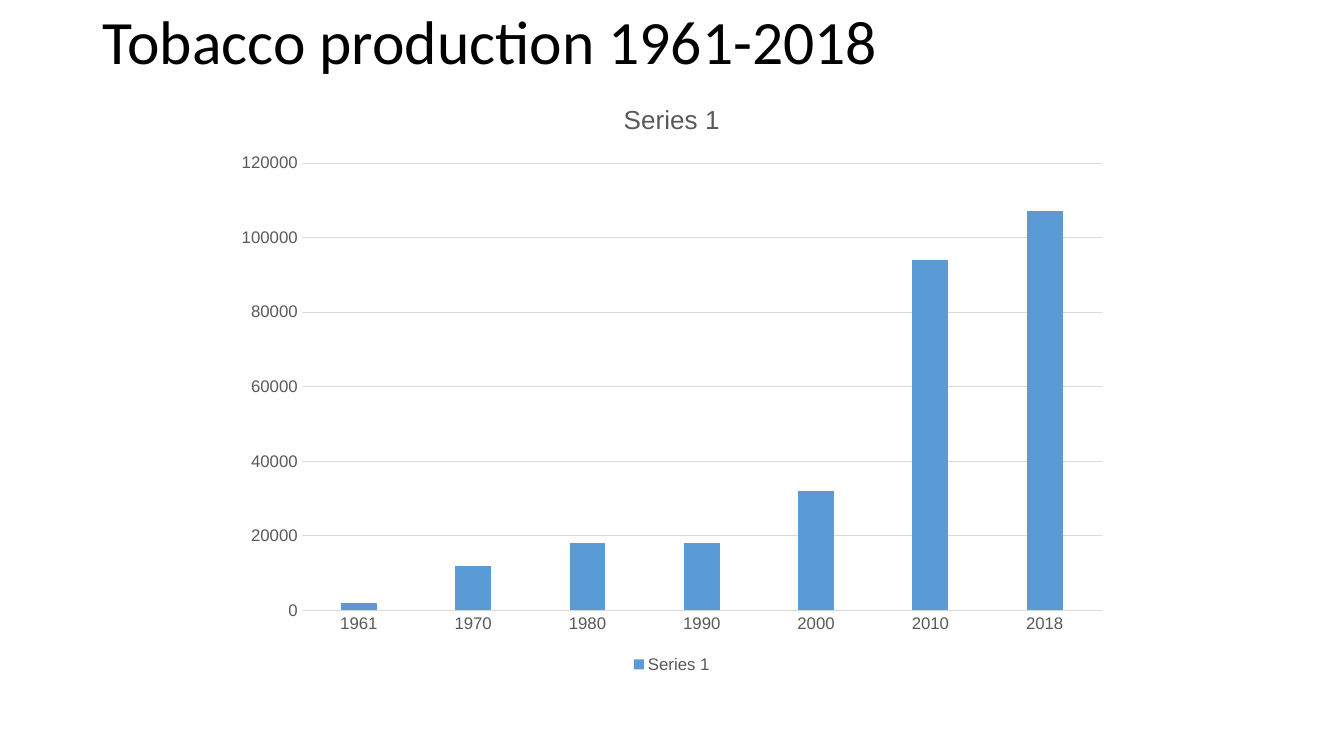
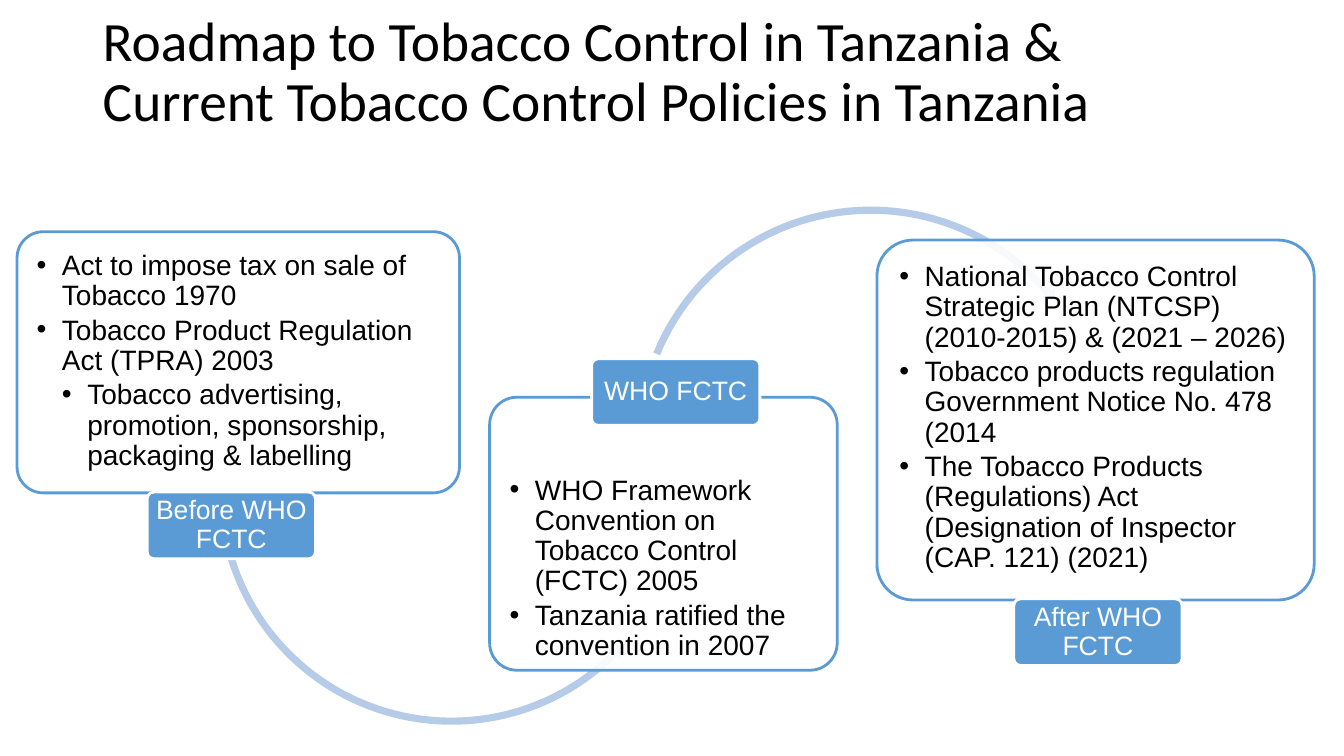
from dataclasses import dataclass

from lxml import etree
from pptx import Presentation
from pptx import util as u
from pptx.chart.data import CategoryChartData
from pptx.dml.color import RGBColor
from pptx.enum import chart as charts, shapes, text
from pptx.oxml.ns import qn


@dataclass(frozen=True)
class Theme:
    black: str = "000000"
    white: str = "FFFFFF"
    blue: str = "5B9BD5"
    pale_blue: str = "B5CBE7"
    grey: str = "595959"
    grid: str = "D9D9D9"
    title_font: str = "Calibri"
    body_font: str = "Arial"
    card_size: float = 20
    label_size: float = 19
    chart_title_size: float = 18.6
    chart_size: float = 12
    border: float = 2
    hairline: float = 0.75
    line_spacing: float = 0.9
    indent: float = 0.64


def rgb(colour):
    return RGBColor.from_string(colour)


class Deck:
    """Holds the style, the presentation and the current slide."""

    def __init__(self, theme):
        self.theme = theme
        self.deck = Presentation()
        self.deck.slide_width, self.deck.slide_height = u.Cm(33.87), u.Cm(19.05)
        self.slide = None

    def style(self, font, size, colour, name=None):
        font.name = name or self.theme.body_font
        font.size, font.color.rgb = u.Pt(size), rgb(colour)

    def set_insets(self, frame, side, top):
        frame.margin_left = frame.margin_right = u.Cm(side)
        frame.margin_top = frame.margin_bottom = u.Cm(top)

    def add_slide(self, heading, box, size):
        self.slide = self.deck.slides.add_slide(self.deck.slide_layouts[6])
        frame = self.slide.shapes.add_textbox(*map(u.Cm, box)).text_frame
        frame.word_wrap = True
        frame.vertical_anchor = text.MSO_ANCHOR.MIDDLE
        title = frame.paragraphs[0]
        title.text, title.line_spacing = heading, self.theme.line_spacing
        self.style(title.font, size, self.theme.black, self.theme.title_font)

    def shape(self, kind, box, fill, line=None):
        shape = self.slide.shapes.add_shape(kind, *map(u.Cm, box))
        shape.shadow.inherit = False
        shape.fill.solid()
        shape.fill.fore_color.rgb = rgb(fill)
        if line:
            shape.line.color.rgb = rgb(line)
            shape.line.width = u.Pt(self.theme.border)
        else:
            shape.line.fill.background()
        return shape

    def rounded(self, box, fill, line):
        shape = self.shape(shapes.MSO_SHAPE.ROUNDED_RECTANGLE, box, fill, line)
        shape.adjustments[0] = 0.1
        shape.text_frame.word_wrap = True
        return shape

    def bullet(self, paragraph, level):
        props = paragraph._p.get_or_add_pPr()
        props.set("marL", str(u.Cm(self.theme.indent * (level + 1))))
        props.set("indent", str(-u.Cm(self.theme.indent)))
        etree.SubElement(props, qn("a:buFont"), typeface=self.theme.body_font)
        etree.SubElement(props, qn("a:buChar"), char="•")

    def card(self, box, items, top):
        """Translucent card; each item is a (level, wording) pair."""
        card = self.rounded(box, self.theme.white, self.theme.blue)
        colour = card.fill._xPr.find(".//" + qn("a:srgbClr"))
        etree.SubElement(colour, qn("a:alpha"), val="90000")
        frame = card.text_frame
        self.set_insets(frame, 0.3, top)
        frame.vertical_anchor = text.MSO_ANCHOR.TOP
        for number, (level, wording) in enumerate(items):
            item = frame.add_paragraph() if number else frame.paragraphs[0]
            item.text, item.alignment = wording, text.PP_ALIGN.LEFT
            item.line_spacing, item.space_after = self.theme.line_spacing, u.Pt(3)
            self.style(item.font, self.theme.card_size, self.theme.black)
            self.bullet(item, level)

    def label(self, left, top, wording):
        label = self.rounded((left, top, 4.24, 1.68), self.theme.blue, self.theme.white)
        frame = label.text_frame
        self.set_insets(frame, 0.1, 0.07)
        frame.vertical_anchor = text.MSO_ANCHOR.MIDDLE
        name = frame.paragraphs[0]
        name.text, name.alignment = wording, text.PP_ALIGN.CENTER
        name.line_spacing = self.theme.line_spacing
        self.style(name.font, self.theme.label_size, self.theme.white)

    def arc(self, kind, left, top, size, start, end):
        """Thin circular arrow between two angles in degrees."""
        arc = self.shape(kind, (left, top, size, size), self.theme.pale_blue)
        per_degree = 0.6  # 60000 angle units over the 100000 adjustment scale
        values = (0.015, 3 * per_degree, end * per_degree, start * per_degree, 0.018)
        for number, value in enumerate(values):
            arc.adjustments[number] = value

    def column_chart(self, box, name, points):
        theme = self.theme
        data = CategoryChartData()
        data.categories = list(points)
        data.add_series(name, list(points.values()))
        chart = self.slide.shapes.add_chart(
            charts.XL_CHART_TYPE.COLUMN_CLUSTERED, *map(u.Cm, box), data).chart
        self.style(chart.font, theme.chart_size, theme.grey)

        # Title and legend
        chart.has_title = True
        heading = chart.chart_title.text_frame.paragraphs[0]
        heading.text = name
        self.style(heading.font, theme.chart_title_size, theme.grey)
        heading.font.bold = False
        chart.has_legend = True
        chart.legend.position = charts.XL_LEGEND_POSITION.BOTTOM
        chart.legend.include_in_layout = False
        self.style(chart.legend.font, theme.chart_size, theme.grey)

        # Axes
        for axis in (chart.category_axis, chart.value_axis):
            axis.major_tick_mark = axis.minor_tick_mark = charts.XL_TICK_MARK.NONE
            self.style(axis.tick_labels.font, theme.chart_size, theme.grey)
        chart.value_axis.format.line.fill.background()
        for ruled in (chart.category_axis, chart.value_axis.major_gridlines):
            ruled.format.line.color.rgb = rgb(theme.grid)
            ruled.format.line.width = u.Pt(theme.hairline)

        # Columns
        plot = chart.plots[0]
        plot.gap_width, plot.overlap, plot.vary_by_categories = 219, -27, False
        columns = plot.series[0].format.fill
        columns.solid()
        columns.fore_color.rgb = rgb(theme.blue)


def main():
    deck = Deck(Theme())

    # Production chart
    deck.add_slide("Tobacco production 1961-2018", (2.34, 0, 29.21, 2.24), 44)
    production = {"1961": 2000, "1970": 12000, "1980": 18000, "1990": 18000,
                  "2000": 32000, "2010": 94000, "2018": 107000}
    deck.column_chart((5.64, 2.01, 22.58, 15.06), "Series 1", production)

    # Roadmap: each arc lies over its own card and under the next one
    deck.add_slide("Roadmap to Tobacco Control in Tanzania & "
                   "Current Tobacco Control Policies in Tanzania",
                   (2.34, 0.23, 26.37, 3.23), 39.6)

    # Before the convention
    deck.card((0.43, 5.84, 11.15, 6.58), [
        (0, "Act to impose tax on sale of Tobacco 1970"),
        (0, "Tobacco Product Regulation Act (TPRA) 2003"),
        (1, "Tobacco advertising, promotion, sponsorship, packaging & labelling"),
    ], top=0.3)
    deck.arc(shapes.MSO_SHAPE.LEFT_CIRCULAR_ARROW, 5.36, 6.35, 12.04,
             start=162.95, end=45.13)
    deck.label(3.71, 12.4, "Before WHO FCTC")

    # The convention
    deck.card((12.34, 10.01, 8.76, 6.88), [
        (0, "WHO Framework Convention on Tobacco Control (FCTC) 2005"),
        (0, "Tanzania ratified the convention in 2007"),
    ], top=1.78)
    deck.arc(shapes.MSO_SHAPE.CIRCULAR_ARROW, 15.9, 5.08, 12.09,
             start=202.24, end=320.07)
    deck.label(14.91, 9.04, "WHO FCTC")

    # After the convention
    deck.card((22.1, 6.05, 11.02, 9.07), [
        (0, "National Tobacco Control Strategic Plan (NTCSP) "
            "(2010-2015) & (2021 – 2026)"),
        (0, "Tobacco products regulation Government Notice No. 478 (2014"),
        (0, "The Tobacco Products (Regulations) Act "
            "(Designation of Inspector (CAP. 121) (2021)"),
    ], top=0.3)
    deck.label(25.55, 15.09, "After WHO FCTC")

    deck.deck.save("out.pptx")


if __name__ == "__main__":
    main()
